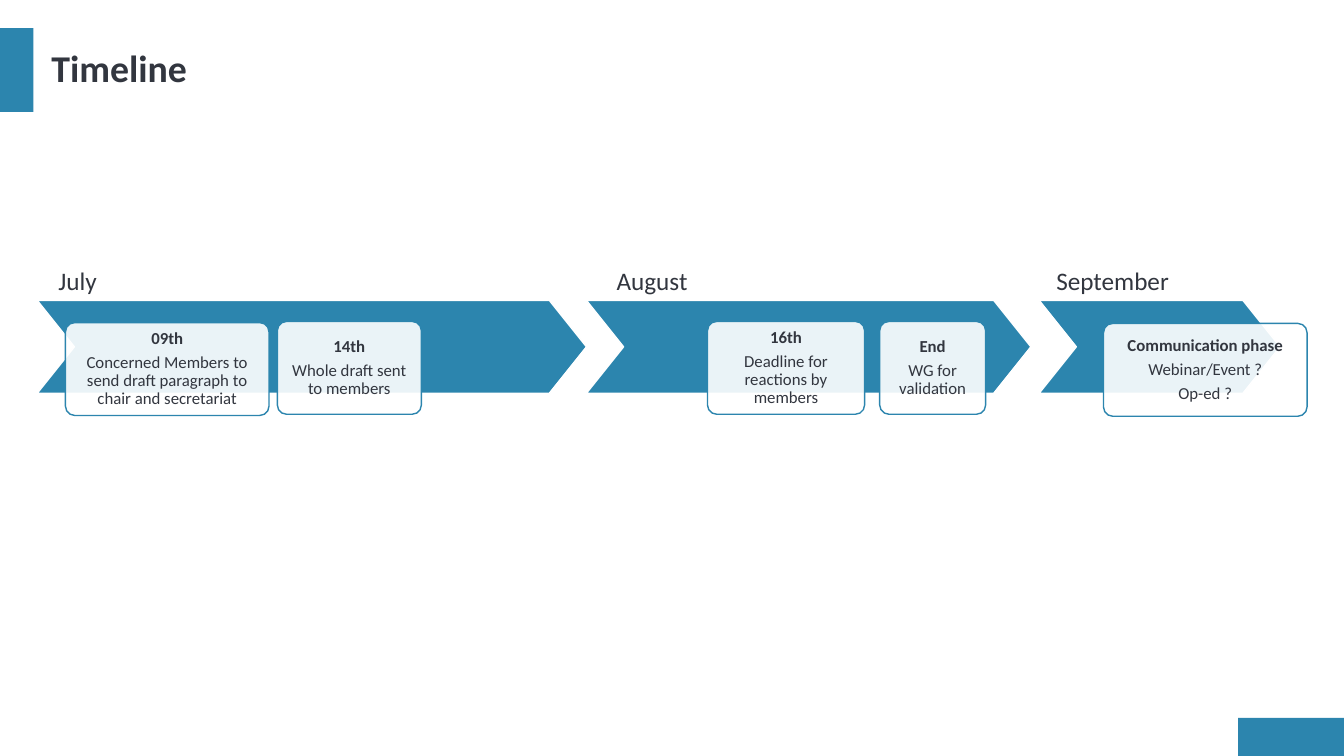
from dataclasses import dataclass

from lxml import etree
from pptx import Presentation
from pptx.dml.color import RGBColor
from pptx.enum.shapes import MSO_SHAPE
from pptx.enum.text import MSO_ANCHOR, PP_ALIGN
from pptx.oxml.ns import qn
from pptx.util import Cm, Pt

RECTANGLE = MSO_SHAPE.RECTANGLE
ROUNDED = MSO_SHAPE.ROUNDED_RECTANGLE
CHEVRON = MSO_SHAPE.CHEVRON
MIDDLE = MSO_ANCHOR.MIDDLE
LEFT, CENTER = PP_ALIGN.LEFT, PP_ALIGN.CENTER

BLUE, WHITE, INK = "2C85AE", "FFFFFF", "32363F"
FONT = "Calibri"
SLIDE_WIDTH, SLIDE_HEIGHT = 33.87, 19.05
BAND_TOP, BAND_HEIGHT = 7.57, 2.34
LABEL_TOP, LABEL_WIDTH, LABEL_HEIGHT = 6.55, 6.1, 1.02
CARD_INSET = 0.19
CARD_OPACITY = 90


@dataclass(frozen=True)
class Box:
    left: float
    top: float
    width: float
    height: float

    def lengths(self):
        return Cm(self.left), Cm(self.top), Cm(self.width), Cm(self.height)


@dataclass(frozen=True)
class Card:
    left: float
    top: float
    width: float
    heading: str
    details: tuple[str, ...]


@dataclass(frozen=True)
class Month:
    name: str
    label_left: float
    left: float
    width: float
    cards: tuple[Card, ...]


MONTHS = (
    Month("July", 1.22, 0.94, 13.84, (
        Card(1.65, 8.13, 5.13, "09th",
             ("Concerned Members to send draft paragraph to chair and secretariat",)),
        Card(6.99, 8.1, 3.63, "14th", ("Whole draft sent to members",)),
    )),
    Month("August", 15.29, 14.78, 11.2, (
        Card(17.83, 8.1, 3.96, "16th", ("Deadline for reactions by members",)),
        Card(22.17, 8.1, 2.67, "End", ("WG for validation",)),
    )),
    Month("September", 26.37, 26.19, 6.07, (
        Card(27.81, 8.15, 5.13, "Communication phase",
             ("Webinar/Event ?", "Op-ed ?")),
    )),
)


def color(value: str) -> RGBColor:
    return RGBColor.from_string(value)


def set_all(target, values: dict) -> None:
    for name, value in values.items():
        setattr(target, name, value)


def write(paragraph, text: str, size: float, bold: bool = False, **layout) -> None:
    run = paragraph.add_run()
    run.text = text
    set_all(run.font, {"name": FONT, "size": Pt(size), "bold": bold})
    run.font.color.rgb = color(INK)
    set_all(paragraph, layout)


def add_block(slide, kind, box: Box, fill: str, line: str | None = None):
    block = slide.shapes.add_shape(kind, *box.lengths())
    block.shadow.inherit = False
    block.fill.solid()
    block.fill.fore_color.rgb = color(fill)
    if line:
        block.line.color.rgb = color(line)
        block.line.width = Pt(1)
    else:
        block.line.fill.background()
    return block


def set_opacity(block, percent: int) -> None:
    fill_color = block.fill._xPr.find(qn("a:solidFill"))[0]
    etree.SubElement(fill_color, qn("a:alpha")).set("val", str(percent * 1000))


def add_title(slide, text: str) -> None:
    title = slide.shapes.title
    title.left, title.top, title.width, title.height = Box(1.04, 0.71, 32, 2.11).lengths()
    title.text_frame.vertical_anchor = MIDDLE
    write(title.text_frame.paragraphs[0], text, 27, True, alignment=LEFT, line_spacing=0.9)


def add_card(slide, card: Card) -> None:
    box = Box(card.left, card.top, card.width, BAND_HEIGHT)
    block = add_block(slide, ROUNDED, box, WHITE, BLUE)
    block.adjustments[0] = 0.1
    set_opacity(block, CARD_OPACITY)
    frame = block.text_frame
    inset = Cm(CARD_INSET)
    set_all(frame, {
        "word_wrap": True, "vertical_anchor": MIDDLE,
        "margin_left": inset, "margin_right": inset,
        "margin_top": inset, "margin_bottom": inset,
    })
    for index, text in enumerate((card.heading, *card.details)):
        paragraph = frame.add_paragraph() if index else frame.paragraphs[0]
        write(paragraph, text, 12, index == 0,
              alignment=CENTER, line_spacing=0.9, space_after=Pt(4.2))


def add_month(slide, month: Month) -> None:
    band = add_block(slide, CHEVRON, Box(month.left, BAND_TOP, month.width, BAND_HEIGHT),
                     BLUE, WHITE)
    band.adjustments[0] = 0.4
    for card in month.cards:
        add_card(slide, card)
    label = slide.shapes.add_textbox(
        *Box(month.label_left, LABEL_TOP, LABEL_WIDTH, LABEL_HEIGHT).lengths())
    label.text_frame.word_wrap = True
    write(label.text_frame.paragraphs[0], month.name, 18)


def main() -> None:
    deck = Presentation()
    deck.slide_width, deck.slide_height = Cm(SLIDE_WIDTH), Cm(SLIDE_HEIGHT)
    slide = deck.slides.add_slide(deck.slide_layouts[5])
    for accent in (Box(31.2, 18.09, 2.67, 0.96), Box(0, 0.71, 0.84, 2.11)):
        add_block(slide, RECTANGLE, accent, BLUE)
    add_title(slide, "Timeline")
    for month in MONTHS:
        add_month(slide, month)
    deck.save("out.pptx")


if __name__ == "__main__":
    main()
